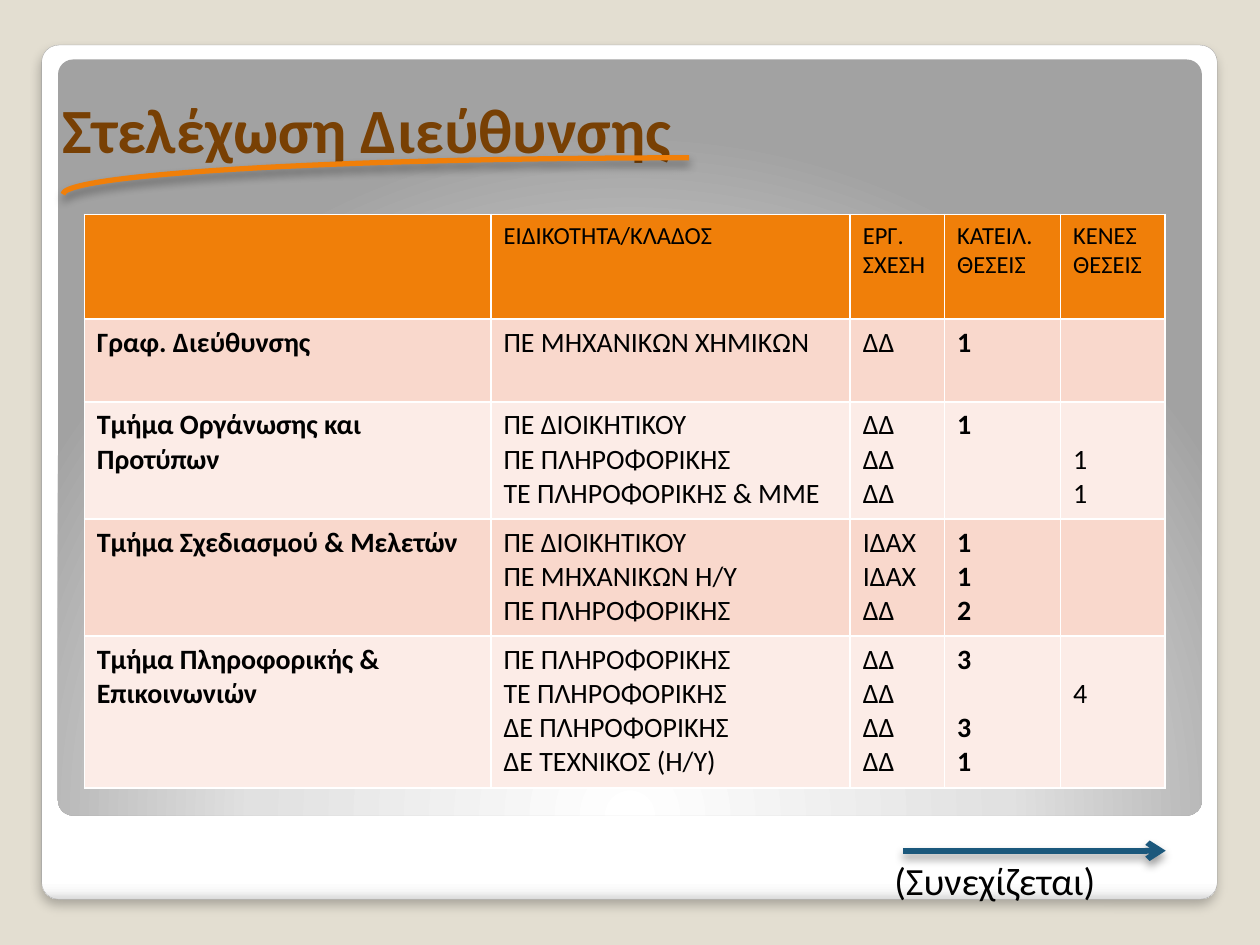
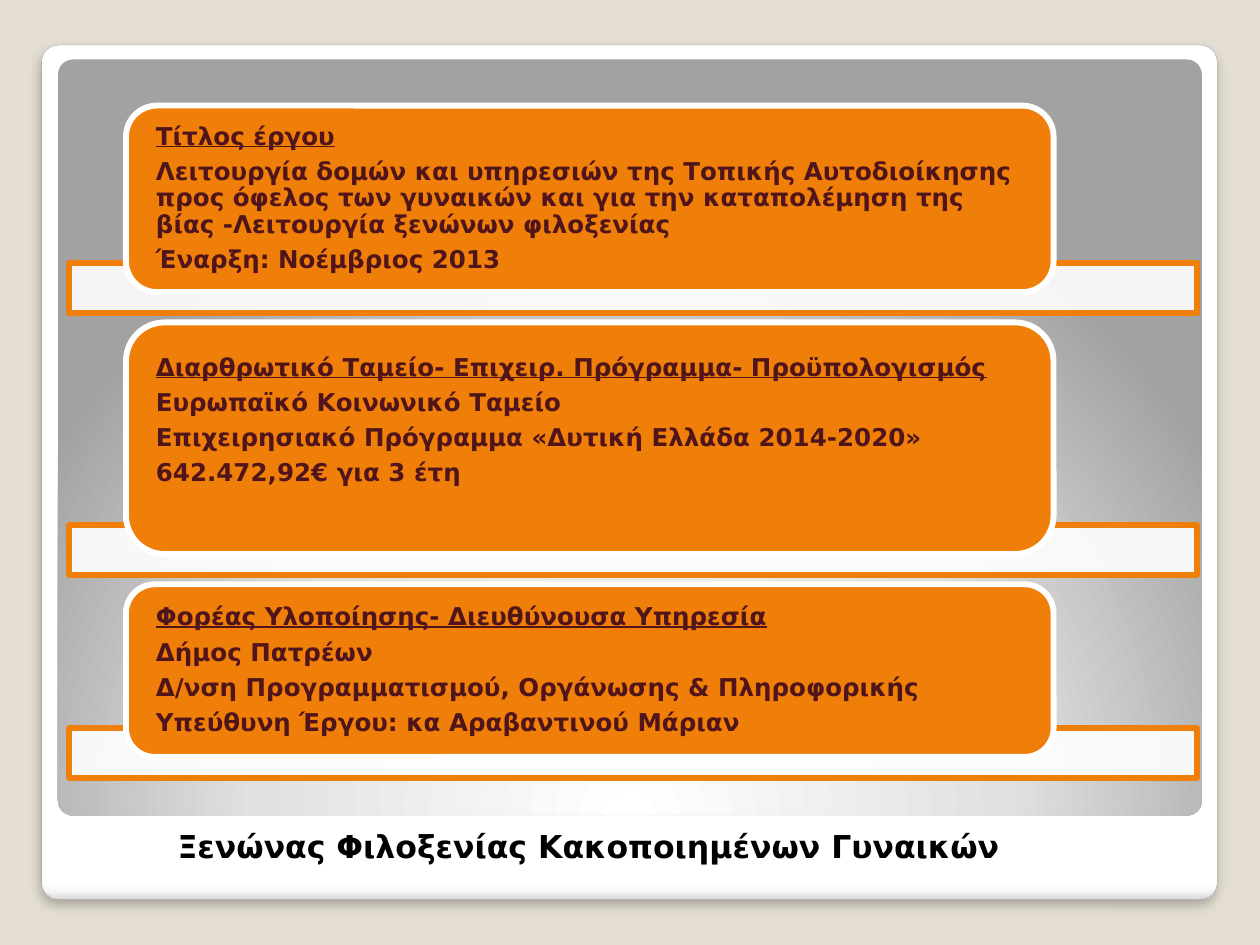
from dataclasses import dataclass

from pptx import Presentation
from pptx.dml.color import RGBColor
from pptx.enum.shapes import MSO_CONNECTOR, MSO_SHAPE
from pptx.enum.text import MSO_ANCHOR
from pptx.oxml import parse_xml
from pptx.oxml.ns import nsdecls, qn
from pptx.util import Cm, Pt


@dataclass(frozen=True)
class Theme:
    sand: str = "E3DED1"
    white: str = "FFFFFF"
    black: str = "000000"
    rim: str = "A4A4A4"
    orange: str = "F07F09"
    brown: str = "784004"
    wine: str = "50141B"
    blue: str = "1B587C"
    bands: tuple = ("F9D8CC", "FCECE7")
    sans: str = "Calibri"
    wide: str = "DejaVu Sans"
    title: float = 36
    note: float = 22
    foot: float = 18
    body: float = 16
    small: float = 14
    stroke: float = 3.35


theme = Theme()
NS = nsdecls("a")


def write(frame, text, size=theme.body, font=theme.sans, color=theme.black, bold=False,
          lead=False, line=None, after=0, inset=None, anchor=None):
    """Write one paragraph per line; an empty line becomes space above the next.

    lead underlines the first line; inset is left, top, right, bottom in cm.
    """
    frame.word_wrap = True
    if anchor is not None:
        frame.vertical_anchor = anchor
    if inset:
        (frame.margin_left, frame.margin_top,
         frame.margin_right, frame.margin_bottom) = [Cm(side) for side in inset]
    gap, part = 0, None
    for words in text.split("\n"):
        if not words:
            gap += 1
            continue
        first = part is None
        part = frame.paragraphs[0] if first else frame.add_paragraph()
        part.space_before = Pt(gap * size * 1.22)
        part.space_after = Pt(after)
        if line:
            part.line_spacing = line
        run = part.add_run()
        run.text = words
        run.font.size, run.font.name = Pt(size), font
        run.font.bold, run.font.underline = bold, lead and first
        run.font.color.rgb = RGBColor.from_string(color)
        gap = 0


def draw(slide, kind, place, fill=None, line=None, width=theme.stroke, shade=None):
    """Draw a shape; shade is a shadow's opacity in %, blur and distance in pt."""
    shape = slide.shapes.add_shape(kind, *[Cm(n) for n in place])
    shape.shadow.inherit = False
    if fill:
        shape.fill.solid()
        shape.fill.fore_color.rgb = RGBColor.from_string(fill)
    else:
        shape.fill.background()
    if line:
        shape.line.color.rgb = RGBColor.from_string(line)
        shape.line.width = Pt(width)
    else:
        shape.line.fill.background()
    if shade:
        shape._element.spPr.find(qn("a:effectLst")).append(parse_xml(SHADOW.format(
            shade[0] * 1000, Pt(shade[1]), Pt(shade[2]))))
    return shape


SHADOW = (f'<a:outerShdw {NS} blurRad="{{1}}" dist="{{2}}" dir="5400000" rotWithShape="0">'
          '<a:srgbClr val="000000"><a:alpha val="{0}"/></a:srgbClr></a:outerShdw>')
SOFT = (40, 5.2, 3)

deck = Presentation()
deck.slide_width, deck.slide_height = Cm(25.4), Cm(19.05)
back = deck.slide_master.background.fill
back.solid()
back.fore_color.rgb = RGBColor.from_string(theme.sand)
blank = deck.slide_layouts[6]
staff, hostel = [deck.slides.add_slide(blank) for _ in range(2)]

# Shared frame: white sheet and grey panel
sheet_stops = [(0, "FFFFFF"), (98, "FFFFFF"), (99, "F7F7F7"), (100, "DADADA")]
panel_stops = [(0, "FFFFFF"), (55, "E1E1E1"), (100, "A2A2A2")]
glow = ('<a:path path="circle"><a:fillToRect l="50000" t="175000" r="50000" b="-75000"/>'
        '</a:path>')
for slide in (staff, hostel):
    sheet = draw(slide, MSO_SHAPE.ROUNDED_RECTANGLE, (0.84, 0.91, 23.7, 17.22),
                 line=theme.rim, width=0.16, shade=(25, 6, 4))
    panel = draw(slide, MSO_SHAPE.ROUNDED_RECTANGLE, (1.17, 1.2, 23.06, 15.24))
    for shape, stops, course in ((sheet, sheet_stops, '<a:lin ang="5400000" scaled="0"/>'),
                                 (panel, panel_stops, glow)):
        shape.adjustments[0] = 0.02
        marks = "".join(f'<a:gs pos="{at * 1000}"><a:srgbClr val="{tone}"/></a:gs>'
                        for at, tone in stops)
        look = shape._element.spPr
        look.replace(look.find(qn("a:noFill")), parse_xml(
            f'<a:gradFill {NS} rotWithShape="1"><a:gsLst>{marks}</a:gsLst>{course}</a:gradFill>'))

# Staffing: title with a swoosh
title = staff.shapes.add_textbox(Cm(1.27), Cm(1.55), Cm(22.86), Cm(1.8))
write(title.text_frame, "Στελέχωση Διεύθυνσης", size=theme.title, color=theme.brown,
      bold=True, line=1.1, after=6, inset=(0, 0.18, 0, 0), anchor=MSO_ANCHOR.BOTTOM)
swoosh = draw(staff, MSO_SHAPE.ARC, (13.16, -8.71, 1.47, 25.25),
              line=theme.orange, width=3, shade=SOFT)
swoosh.rotation = 270

# Staffing: table of posts
rows = [
    ("", "ΕΙΔΙΚΟΤΗΤΑ/ΚΛΑΔΟΣ", "ΕΡΓ. ΣΧΕΣΗ", "ΚΑΤΕΙΛ. ΘΕΣΕΙΣ", "ΚΕΝΕΣ ΘΕΣΕΙΣ"),
    ("Γραφ. Διεύθυνσης", "ΠΕ ΜΗΧΑΝΙΚΩΝ ΧΗΜΙΚΩΝ", "ΔΔ", "1", ""),
    ("Τμήμα Οργάνωσης και Προτύπων",
     "ΠΕ ΔΙΟΙΚΗΤΙΚΟΥ\nΠΕ ΠΛΗΡΟΦΟΡΙΚΗΣ\nΤΕ ΠΛΗΡΟΦΟΡΙΚΗΣ & ΜΜΕ", "ΔΔ\nΔΔ\nΔΔ", "1", "\n1\n1"),
    ("Τμήμα Σχεδιασμού & Μελετών",
     "ΠΕ ΔΙΟΙΚΗΤΙΚΟΥ\nΠΕ ΜΗΧΑΝΙΚΩΝ Η/Υ\nΠΕ ΠΛΗΡΟΦΟΡΙΚΗΣ", "ΙΔΑΧ\nΙΔΑΧ\nΔΔ", "1\n1\n2", ""),
    ("Τμήμα Πληροφορικής & Επικοινωνιών",
     "ΠΕ ΠΛΗΡΟΦΟΡΙΚΗΣ\nΤΕ ΠΛΗΡΟΦΟΡΙΚΗΣ\nΔΕ ΠΛΗΡΟΦΟΡΙΚΗΣ\nΔΕ ΤΕΧΝΙΚΟΣ (Η/Υ)",
     "ΔΔ\nΔΔ\nΔΔ\nΔΔ", "3\n\n3\n1", "\n4"),
]
widths = (8.2, 7.24, 1.9, 2.34, 2.11)
heights = (2.11, 1.67, 2.36, 2.36, 3.07)
table = staff.shapes.add_table(len(rows), len(widths), Cm(1.7), Cm(4.32),
                               Cm(sum(widths)), Cm(sum(heights))).table
table.first_row = table.horz_banding = False
for column, width in zip(table.columns, widths):
    column.width = Cm(width)
for i, (row, height) in enumerate(zip(rows, heights)):
    table.rows[i].height = Cm(height)
    for j, text in enumerate(row):
        cell = table.cell(i, j)
        for side in "LRTB":
            cell._tc.get_or_add_tcPr().append(parse_xml(
                f'<a:ln{side} {NS} w="{Pt(1)}"><a:solidFill><a:srgbClr val="{theme.white}"/>'
                f'</a:solidFill></a:ln{side}>'))
        cell.fill.solid()
        cell.fill.fore_color.rgb = RGBColor.from_string(
            theme.bands[(i - 1) % 2] if i else theme.orange)
        words = text.lstrip("\n")
        cell.margin_top = Cm(0.13 + 0.69 * (len(text) - len(words)))
        write(cell.text_frame, words, size=theme.body if i else theme.small,
              bold=i > 0 and j in (0, 3))

# Staffing: pointer to the next page
note = staff.shapes.add_textbox(Cm(17.78), Cm(17.15), Cm(5.92), Cm(1.2))
write(note.text_frame, "(Συνεχίζεται)", size=theme.note)
arrow = staff.shapes.add_connector(MSO_CONNECTOR.STRAIGHT, Cm(18.2), Cm(17.15),
                                   Cm(23.5), Cm(17.15))
arrow.line.color.rgb = RGBColor.from_string(theme.blue)
arrow.line.width = Pt(theme.stroke)
arrow.line._get_or_add_ln().append(parse_xml(f'<a:tailEnd {NS} type="arrow"/>'))
effect = parse_xml(f"<a:effectLst {NS}/>")
effect.append(parse_xml(SHADOW.format(SOFT[0] * 1000, Pt(SOFT[1]), Pt(SOFT[2]))))
arrow._element.spPr.append(effect)

# Hostel: three cards, each over a bar; height, space kept below the text, text
cards = [
    (3.76, 0, "Τίτλος έργου\n"
     "Λειτουργία δομών και υπηρεσιών της Τοπικής Αυτοδιοίκησης προς όφελος των γυναικών "
     "και για την καταπολέμηση της βίας -Λειτουργία ξενώνων φιλοξενίας\n"
     "Έναρξη: Νοέμβριος 2013"),
    (4.67, 0.7, "Διαρθρωτικό Ταμείο- Επιχειρ. Πρόγραμμα- Προϋπολογισμός\n"
     "Ευρωπαϊκό Κοινωνικό Ταμείο\n"
     "Επιχειρησιακό Πρόγραμμα «Δυτική Ελλάδα 2014-2020»\n"
     "642.472,92€ για 3 έτη"),
    (3.48, 0, "Φορέας Υλοποίησης- Διευθύνουσα Υπηρεσία\n"
     "Δήμος Πατρέων\n"
     "Δ/νση Προγραμματισμού, Οργάνωσης & Πληροφορικής\n"
     "Υπεύθυνη Έργου: κα Αραβαντινού Μάριαν"),
]
top = 2.13
for height, below, text in cards:
    bar = draw(hostel, MSO_SHAPE.RECTANGLE, (1.4, top + height - 0.58, 22.73, 1),
               fill=theme.white, line=theme.orange)
    bar._element.spPr.find(qn("a:solidFill"))[0].append(
        parse_xml(f'<a:alpha {NS} val="90000"/>'))
    card = draw(hostel, MSO_SHAPE.ROUNDED_RECTANGLE, (2.54, top, 18.7, height),
                fill=theme.orange, line=theme.white)
    edge = 0.61 - 0.05 * height  # the round corners already push the text in
    write(card.text_frame, text, size=theme.small, font=theme.wide, color=theme.wine,
          bold=True, lead=True, line=0.9, after=4.9, inset=(edge, 0, edge, below),
          anchor=MSO_ANCHOR.MIDDLE)
    for part in card.text_frame.paragraphs:
        part.alignment = 1
    top += height + 0.61

name = hostel.shapes.add_textbox(Cm(3.33), Cm(16.54), Cm(20.3), Cm(1.02))
write(name.text_frame, "Ξενώνας Φιλοξενίας Κακοποιημένων Γυναικών",
      size=theme.foot, font=theme.wide, bold=True)

deck.save("out.pptx")
